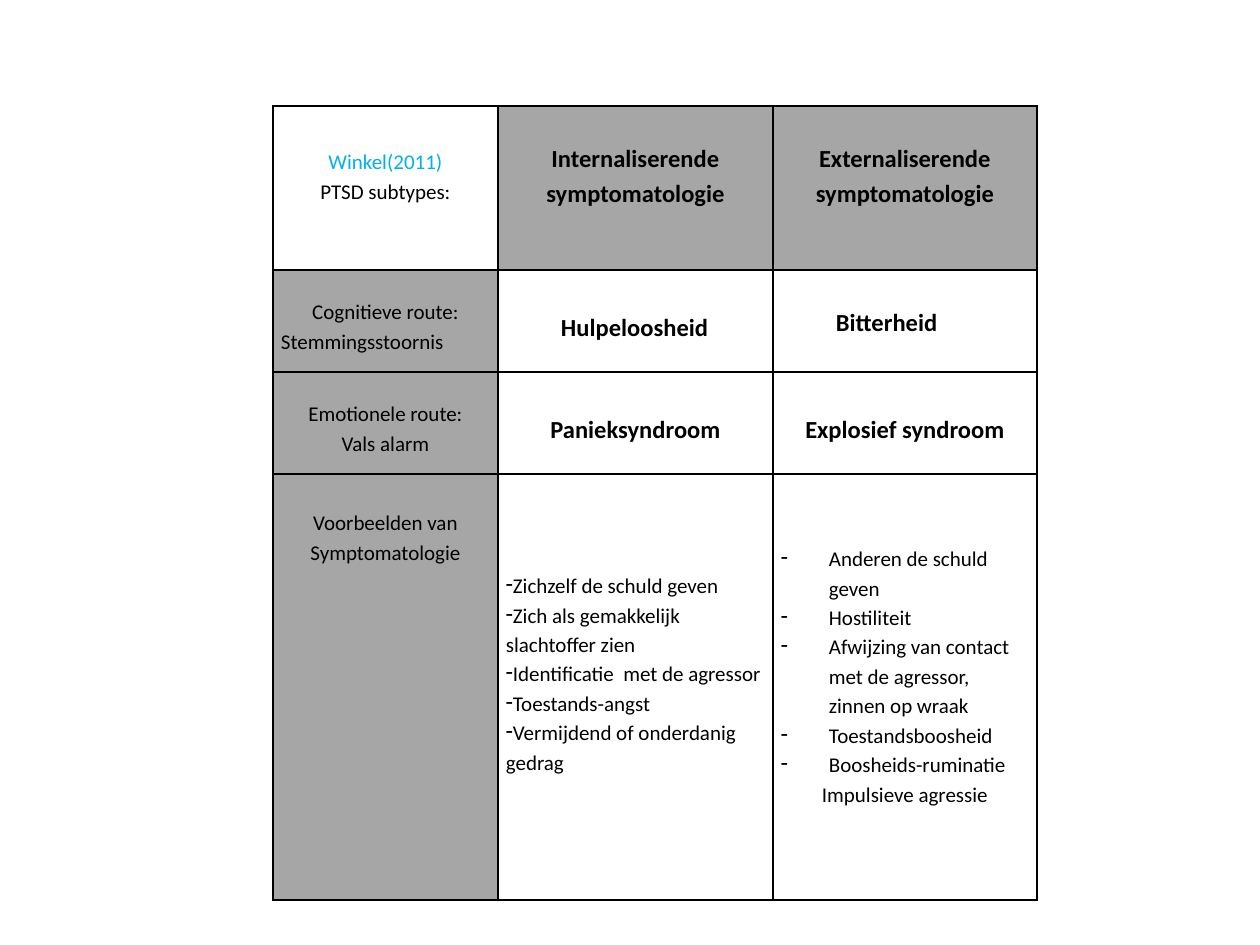
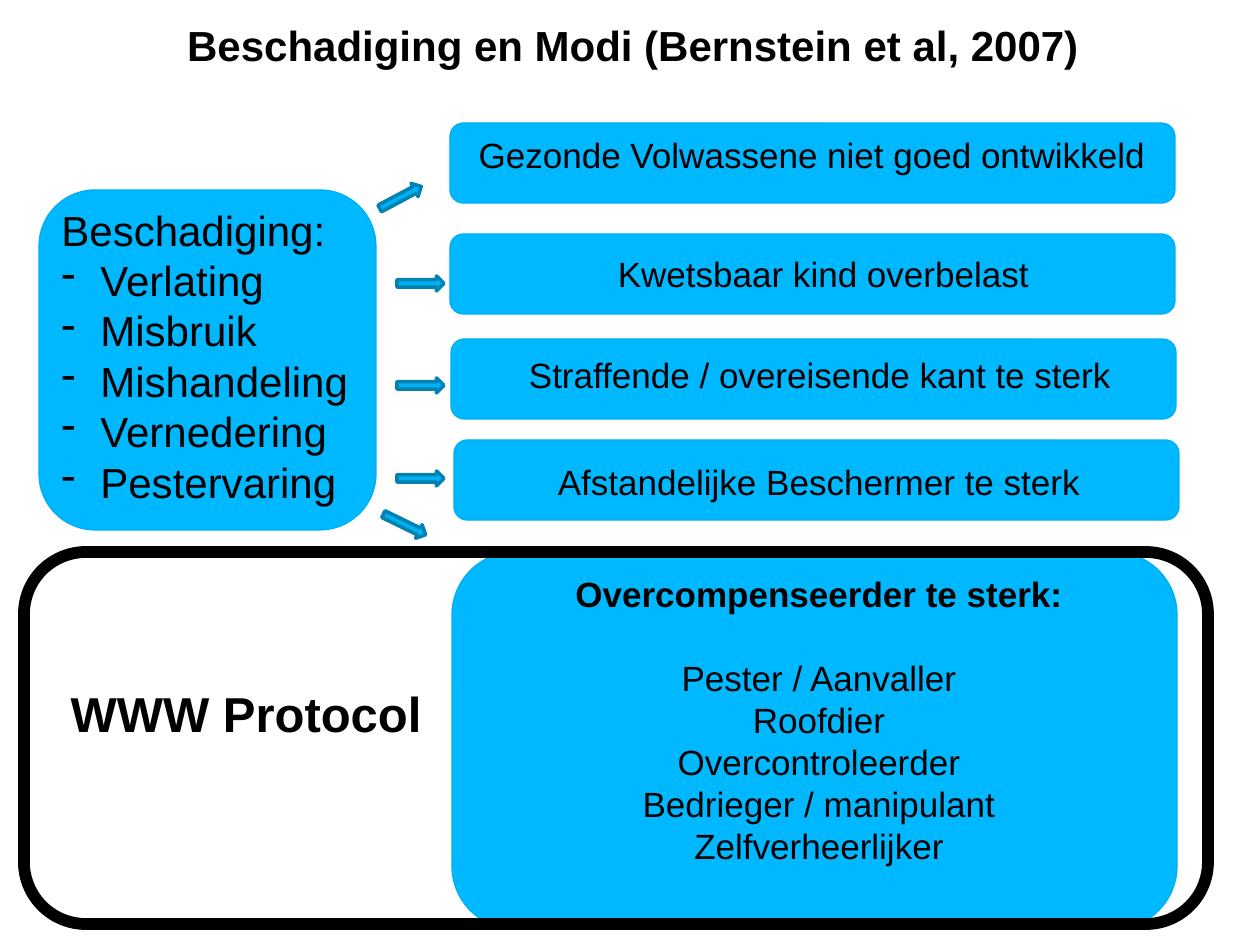
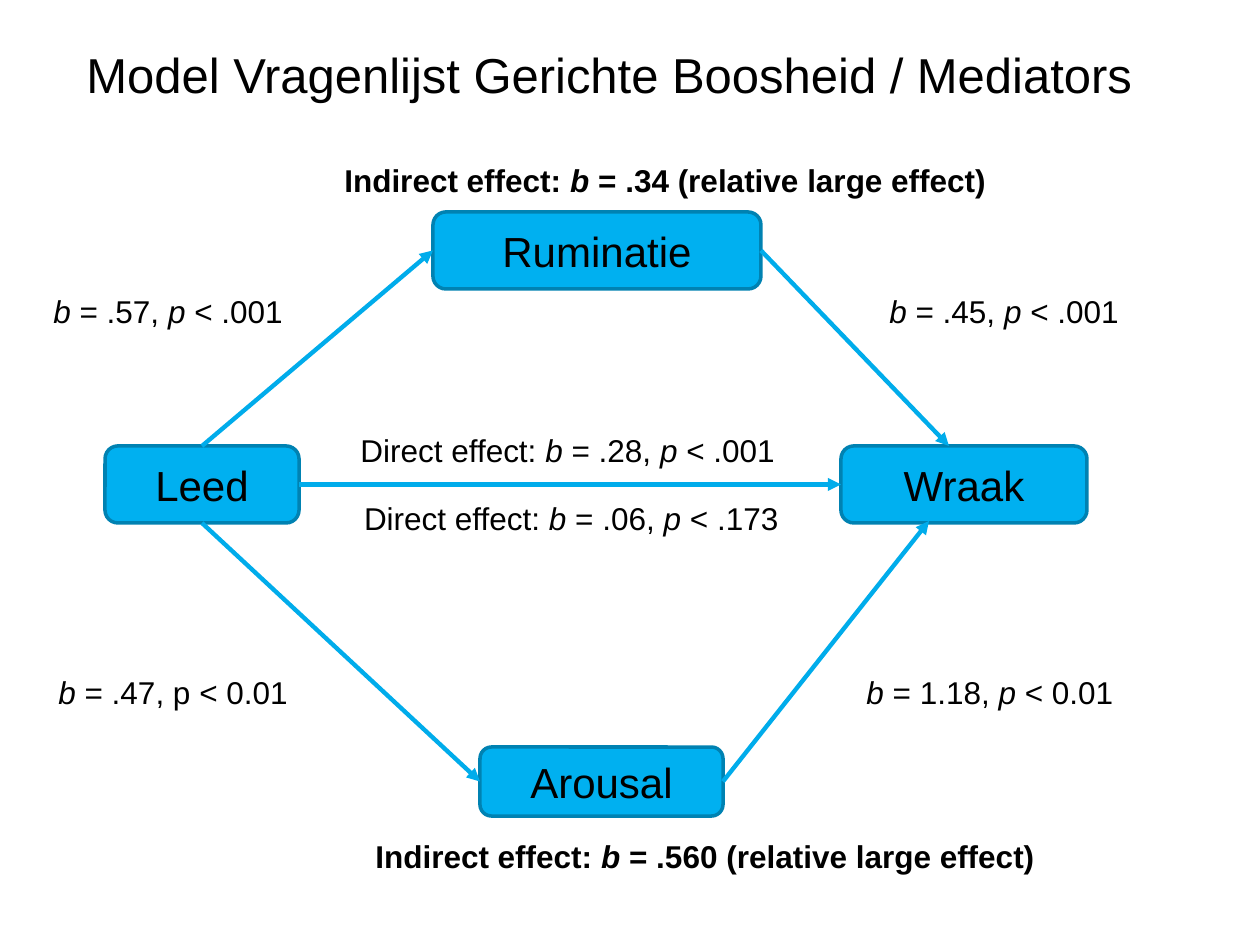
from lxml import etree
from pptx import Presentation
from pptx import util as u
from pptx.dml.color import RGBColor
from pptx.enum import shapes, text
from pptx.oxml import ns

PX = u.Inches(1) / 126
BLACK, WHITE, GREY = "000000", "FFFFFF", "A6A6A6"
SKY, BLUE, LINE_BLUE, EDGE_BLUE = "00B8FF", "00B0F0", "00ACEB", "0082B2"
LEFT, CENTER = text.PP_ALIGN.LEFT, text.PP_ALIGN.CENTER
ROUND = shapes.MSO_SHAPE.ROUNDED_RECTANGLE
ARROW = shapes.MSO_SHAPE.RIGHT_ARROW
colour = RGBColor.from_string


def write(frame, content, size, align=LEFT, bold=False, face="Arial", spacing=None, hang=0):
    frame.word_wrap = True
    for number, line in enumerate(content.split("\n")):
        para = frame.add_paragraph() if number else frame.paragraphs[0]
        para.alignment = align
        para.line_spacing = spacing or u.Pt(size * 1.2)
        if line.startswith("-"):
            line = line[1:]
            props = para._p.get_or_add_pPr()
            props.set("marL", str(int(hang * PX)))
            props.set("indent", str(int(-hang * PX)))
            etree.SubElement(props, ns.qn("a:buChar")).set("char", "-")
        para.font.name, para.font.size, para.font.bold = face, u.Pt(size), bold
        para.font.color.rgb = colour(BLACK)
        for order, part in enumerate(line.split("*")):
            if part:
                span = para.add_run()
                span.text = part
                if order % 2:
                    span.font.italic = True


def draw(page, kind, at, fill, edge, weight):
    shape = page.shapes.add_shape(kind, *[int(v * PX) for v in at])
    shape.shadow.inherit = False
    if fill:
        shape.fill.solid()
        shape.fill.fore_color.rgb = colour(fill)
    else:
        shape.fill.background()
    shape.line.color.rgb = colour(edge)
    shape.line.width = u.Pt(weight)
    return shape


deck = Presentation()
deck.slide_width, deck.slide_height = u.Inches(10), u.Inches(7.5)
subtypes, modes, model = [deck.slides.add_slide(deck.slide_layouts[6]) for _ in range(3)]

columns, heights = (225, 275, 264), (164, 102, 102, 426)
symptoms = subtypes.shapes.add_table(
    4, 3, *[int(v * PX) for v in (273, 106, sum(columns), sum(heights))]).table
for column, width in zip(symptoms.columns, columns):
    column.width = int(width * PX)
for row, height in zip(symptoms.rows, heights):
    row.height = int(height * PX)

cells = [
    (0, 0, "Winkel(2011)\nPTSD subtypes:", 40, 8, 12, CENTER, 0),
    (0, 1, "Internaliserende symptomatologie", 34, 8, 14, CENTER, 0),
    (0, 2, "Externaliserende symptomatologie", 34, 8, 14, CENTER, 0),
    (1, 0, "Cognitieve route:\nStemmingsstoornis", 26, 8, 12, CENTER, 0),
    (1, 1, "Hulpeloosheid", 39, 63, 14, LEFT, 0),
    (1, 2, "Bitterheid", 34, 63, 14, LEFT, 0),
    (2, 0, "Emotionele route:\nVals alarm", 26, 8, 12, CENTER, 0),
    (2, 1, "Panieksyndroom", 39, 8, 14, CENTER, 0),
    (2, 2, "Explosief syndroom", 39, 8, 14, CENTER, 0),
    (3, 0, "Voorbeelden van\nSymptomatologie", 33, 8, 12, CENTER, 0),
    (3, 1, "-Zichzelf de schuld geven\n-Zich als gemakkelijk slachtoffer zien\n"
           "-Identificatie  met de agressor\n-Toestands-angst\n"
           "-Vermijdend of onderdanig gedrag", 96, 8, 12, LEFT, 0),
    (3, 2, "-Anderen de schuld geven\n-Hostiliteit\n"
           "-Afwijzing van contact met de agressor, zinnen op wraak\n"
           "-Toestandsboosheid\n-Boosheids-ruminatie\nImpulsieve agressie",
     69, 8, 12, LEFT, 48),
]
for row, column, content, top, left, size, align, hang in cells:
    cell = symptoms.cell(row, column)
    cell.margin_left, cell.margin_right = int(left * PX), int(8 * PX)
    cell.margin_top, cell.margin_bottom = int(top * PX), 0
    write(cell.text_frame, content, size, align, size == 14, "Calibri", 1.15, hang)
    if (row == 0) != (column == 0):
        cell.fill.solid()
        cell.fill.fore_color.rgb = colour(GREY)
    else:
        cell.fill.background()
symptoms.cell(0, 0).text_frame.paragraphs[0].font.color.rgb = colour(BLUE)
symptoms.cell(1, 0).text_frame.paragraphs[1].alignment = LEFT
symptoms.cell(3, 2).text_frame.paragraphs[-1].alignment = CENTER

for left, top, width, height in [
    (450, 234, 725, 80), (451, 339, 725, 80), (454, 440, 725, 80),
    (452, 552, 725, 377), (450, 123, 725, 80), (39, 190, 337, 340),
]:
    draw(modes, ROUND, (left, top, width, height), SKY, BLUE, 0.75)
for left, top, turn in [
    (377, 190, -28), (397, 276, 0), (397, 378, 0), (397, 471, 0), (381, 517, 26),
]:
    draw(modes, ARROW, (left, top, 47, 15), BLUE, EDGE_BLUE, 2).rotation = turn
draw(modes, ROUND, (24, 552, 1184, 372), None, BLACK, 6.75)

labels = [
    (modes, (3, 13, 1260, 60), "Beschadiging en Modi (Bernstein et al, 2007)", 24, CENTER, True),
    (modes, (49, 198, 383, 320), "Beschadiging:\n-Verlating\n-Misbruik\n-Mishandeling\n"
                                 "-Vernedering\n-Pestervaring", 24, LEFT, False),
    (modes, (425, 127, 774, 56), "Gezonde Volwassene niet goed ontwikkeld", 20, CENTER, False),
    (modes, (482, 246, 683, 56), "Kwetsbaar kind overbelast", 20, CENTER, False),
    (modes, (433, 347, 774, 56), "Straffende / overeisende kant te sterk", 20, CENTER, False),
    (modes, (432, 454, 774, 56), "Afstandelijke Beschermer te sterk", 20, CENTER, False),
    (modes, (432, 566, 774, 340), "Overcompenseerder te sterk:\nPester / Aanvaller\nRoofdier\n"
                                  "Overcontroleerder\nBedrieger / manipulant\nZelfverheerlijker",
     20, CENTER, False),
    (modes, (36, 677, 420, 76), "WWW Protocol", 28, CENTER, True),
    (model, (348, 425, 448, 50), "Direct effect: *b* = .28, *p* < .001", 18, LEFT, False),
    (model, (41, 286, 262, 50), "*b* = .57, *p* < .001", 18, LEFT, False),
    (model, (877, 286, 262, 50), "*b* = .45, *p* < .001", 18, LEFT, False),
    (model, (332, 155, 680, 50), "Indirect effect: *b *= .34 (relative large effect)",
     18, LEFT, True),
    (model, (46, 667, 262, 50), "*b *= .47, p < 0.01", 18, LEFT, False),
    (model, (854, 667, 280, 50), "*b *= 1.18, *p* < 0.01", 18, LEFT, False),
    (model, (363, 831, 696, 50), "Indirect effect: *b* = .560 (relative large effect)",
     18, LEFT, True),
    (model, (74, 38, 1088, 72), "Model Vragenlijst Gerichte Boosheid / Mediators",
     28, LEFT, False),
]
for page, at, content, size, align, bold in labels:
    box = page.shapes.add_textbox(*[int(v * PX) for v in at])
    write(box.text_frame, content, size, align, bold, hang=39)
    if content.startswith("Overcompenseerder"):
        heading = box.text_frame.paragraphs[0]
        heading.font.bold = True
        heading.space_after = u.Pt(24)

concepts = {}
for name, at in {
    "Leed": (105, 446, 194, 77), "Wraak": (841, 446, 246, 77),
    "Ruminatie": (433, 212, 328, 77), "Arousal": (480, 747, 243, 69),
}.items():
    concepts[name] = draw(model, ROUND, at, BLUE, EDGE_BLUE, 2)
    concepts[name].text_frame.vertical_anchor = text.MSO_ANCHOR.MIDDLE
    write(concepts[name].text_frame, name, 24, CENTER)

for source, start_side, target, end_side, end in [
    ("Leed", 3, "Wraak", 1, (841, 484)),
    ("Ruminatie", 3, None, None, (949, 446)),
    ("Leed", 0, "Ruminatie", 1, (433, 251)),
    ("Leed", 2, "Arousal", 1, (480, 781)),
    ("Arousal", 3, None, None, (929, 521)),
]:
    link = model.shapes.add_connector(
        shapes.MSO_CONNECTOR.STRAIGHT, 0, 0, *[int(v * PX) for v in end])
    link.begin_connect(concepts[source], start_side)
    if target:
        link.end_connect(concepts[target], end_side)
    link.line.color.rgb = colour(LINE_BLUE)
    link.line.width = u.Pt(2.5)
    etree.SubElement(link.line._get_or_add_ln(), ns.qn("a:tailEnd")).set("type", "triangle")
    etree.SubElement(link._element.spPr, ns.qn("a:effectLst"))

direct = model.shapes.add_table(1, 1, *[int(v * PX) for v in (363, 498, 436, 45)]).table
cell = direct.cell(0, 0)
cell.margin_left = cell.margin_right = cell.margin_top = int(PX)
cell.margin_bottom = int(6 * PX)
cell.vertical_anchor = text.MSO_ANCHOR.BOTTOM
cell.fill.background()
write(cell.text_frame, "Direct effect: *b* = .06, *p* < .173", 18)

for table, edge in ((symptoms, BLACK), (direct, WHITE)):
    table.first_row = table.horz_banding = False
    for cell in table.iter_cells():
        props = cell._tc.get_or_add_tcPr()
        for order, side in enumerate(("lnL", "lnR", "lnT", "lnB")):
            border = etree.Element(ns.qn("a:" + side), w=str(u.Pt(1)))
            paint = etree.SubElement(border, ns.qn("a:solidFill"))
            etree.SubElement(paint, ns.qn("a:srgbClr")).set("val", edge)
            props.insert(order, border)

deck.save("out.pptx")
